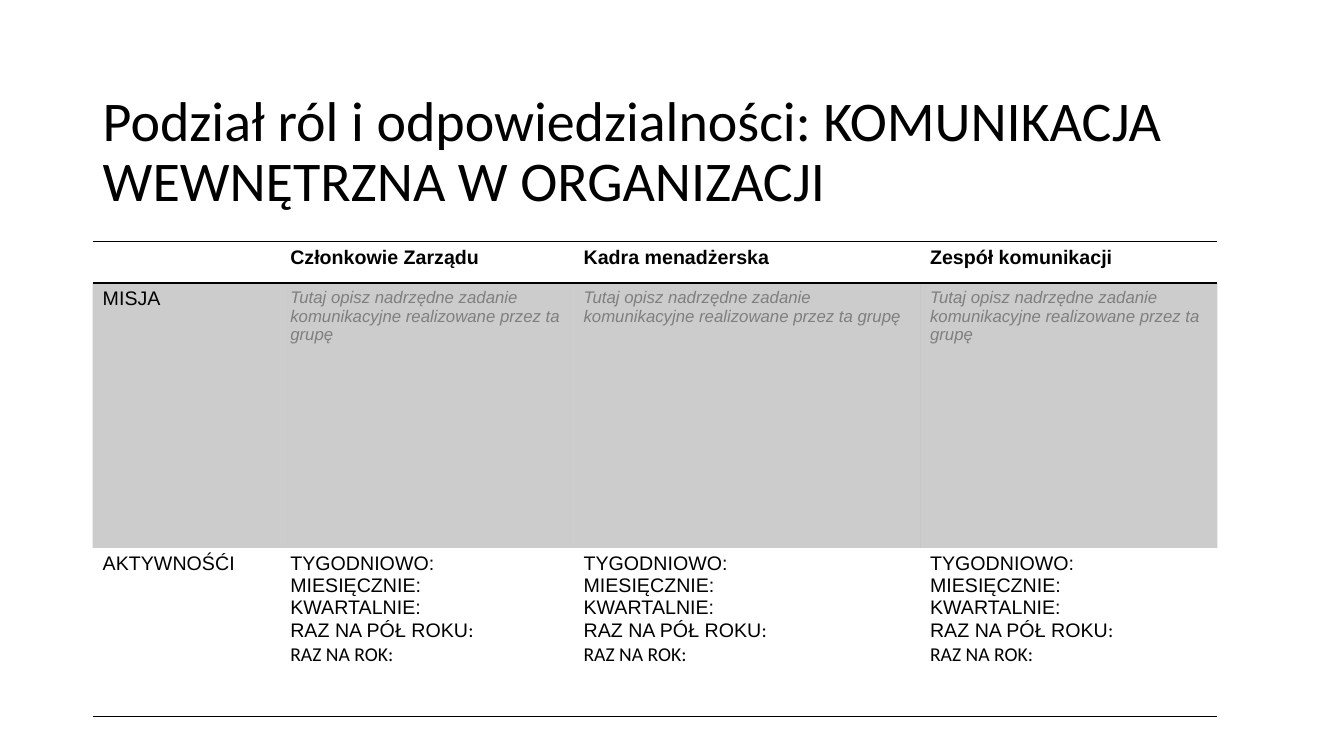
import pptx
import pptx.dml.color
import pptx.enum.text
import pptx.oxml
import pptx.oxml.ns
import pptx.util

Pt = pptx.util.Pt

COLORS = {"text": "000000", "hint": "7F7F7F", "rule": "000000", "band": "000000"}
BAND_OPACITY = 20
BODY_FONT, ALTERNATE_FONT = "Arial", "Calibri"

TITLE = "Podział ról i odpowiedzialności: KOMUNIKACJA WEWNĘTRZNA W ORGANIZACJI"
GROUPS = ["Członkowie Zarządu", "Kadra menadżerska", "Zespół komunikacji"]
HINT = "Tutaj opisz nadrzędne zadanie komunikacyjne realizowane przez ta grupę"
# Each line is a list of (text, font) runs.
FREQUENCIES = [
    [("TYGODNIOWO:", BODY_FONT)],
    [("MIESIĘCZNIE:", BODY_FONT)],
    [("KWARTALNIE:", BODY_FONT)],
    [("RAZ NA PÓŁ ROKU", BODY_FONT), (":", ALTERNATE_FONT)],
    [("RAZ NA ROK:", ALTERNATE_FONT)],
]


def plain(text):
    return [[(text, BODY_FONT)]]


ROWS = [
    [plain(text) for text in ["", *GROUPS]],
    [plain("MISJA")] + [plain(HINT)] * len(GROUPS),
    [plain("AKTYWNOŚĆI")] + [FREQUENCIES] * len(GROUPS),
]
HEADER, MISSION, ACTIVITIES = range(3)
BORDERS = {HEADER: ["lnT", "lnB"], MISSION: [], ACTIVITIES: ["lnB"]}

LEFT = 66.2
TITLE_BOX = (LEFT, 57.5, 828, 104.4)
TABLE_TOP = 172.6
COLUMN_WIDTHS = [134, 209.5, 247.5, 212.5]
ROW_HEIGHTS = [29.5, 189.3, 120.2]
NO_STYLE = "{2D5ABB26-0587-4C30-8999-92F81FD0307C}"


def rgb(name):
    return pptx.dml.color.RGBColor.from_string(COLORS[name])


def format_font(font, size, color, bold=False, italic=False):
    font.size, font.bold, font.italic = Pt(size), bold, italic
    font.color.rgb = rgb(color)


def write_cell(cell, lines, **style):
    frame = cell.text_frame
    for index, runs in enumerate(lines):
        paragraph = frame.add_paragraph() if index else frame.paragraphs[0]
        format_font(paragraph.font, **style)
        if len(runs) == 1:
            paragraph.font.name = runs[0][1]
        for text, font_name in runs:
            if text:
                run = paragraph.add_run()
                run.text = text
                if len(runs) > 1:
                    run.font.name = font_name


def add_border(cell, side):
    cell._tc.get_or_add_tcPr().append(pptx.oxml.parse_xml(
        f'<a:{side} {pptx.oxml.ns.nsdecls("a")} w="{Pt(1)}"><a:solidFill>'
        f'<a:srgbClr val="{COLORS["rule"]}"/></a:solidFill></a:{side}>'))


def fill_band(cell):
    cell.fill.solid()
    cell.fill.fore_color.rgb = rgb("band")
    color = cell._tc.tcPr.find(".//" + pptx.oxml.ns.qn("a:solidFill") + "/*")
    color.append(pptx.oxml.parse_xml(
        f'<a:alpha {pptx.oxml.ns.nsdecls("a")} val="{BAND_OPACITY * 1000}"/>'))


def add_title(slide):
    title = slide.shapes.title
    title.left, title.top, title.width, title.height = map(Pt, TITLE_BOX)
    frame = title.text_frame
    frame.text = TITLE
    frame.word_wrap = True
    frame.auto_size = pptx.enum.text.MSO_AUTO_SIZE.NONE
    frame.vertical_anchor = pptx.enum.text.MSO_ANCHOR.MIDDLE
    paragraph = frame.paragraphs[0]
    paragraph.alignment = pptx.enum.text.PP_ALIGN.LEFT
    paragraph.line_spacing = 0.9
    format_font(paragraph.font, 40, "text")
    paragraph.font.name = ALTERNATE_FONT


def add_role_table(slide):
    table = slide.shapes.add_table(
        len(ROWS), len(COLUMN_WIDTHS), Pt(LEFT), Pt(TABLE_TOP),
        Pt(sum(COLUMN_WIDTHS)), Pt(sum(ROW_HEIGHTS))).table
    table.horz_banding = False
    table._tbl.tblPr.find(pptx.oxml.ns.qn("a:tableStyleId")).text = NO_STYLE
    for column, width in zip(table.columns, COLUMN_WIDTHS):
        column.width = Pt(width)
    for row, height in zip(table.rows, ROW_HEIGHTS):
        row.height = Pt(height)
    for row_index, row in enumerate(ROWS):
        for column_index, lines in enumerate(row):
            cell = table.cell(row_index, column_index)
            is_hint = row_index == MISSION and column_index > 0
            write_cell(cell, lines, size=12 if is_hint else 14,
                       color="hint" if is_hint else "text",
                       bold=row_index == HEADER, italic=is_hint)
            for side in BORDERS[row_index]:
                add_border(cell, side)
            if row_index == MISSION:
                fill_band(cell)
            else:
                cell.fill.background()


def main():
    presentation = pptx.Presentation()
    presentation.slide_width, presentation.slide_height = Pt(960), Pt(540)
    slide = presentation.slides.add_slide(presentation.slide_layouts[5])
    add_title(slide)
    add_role_table(slide)
    presentation.save("out.pptx")


if __name__ == "__main__":
    main()
